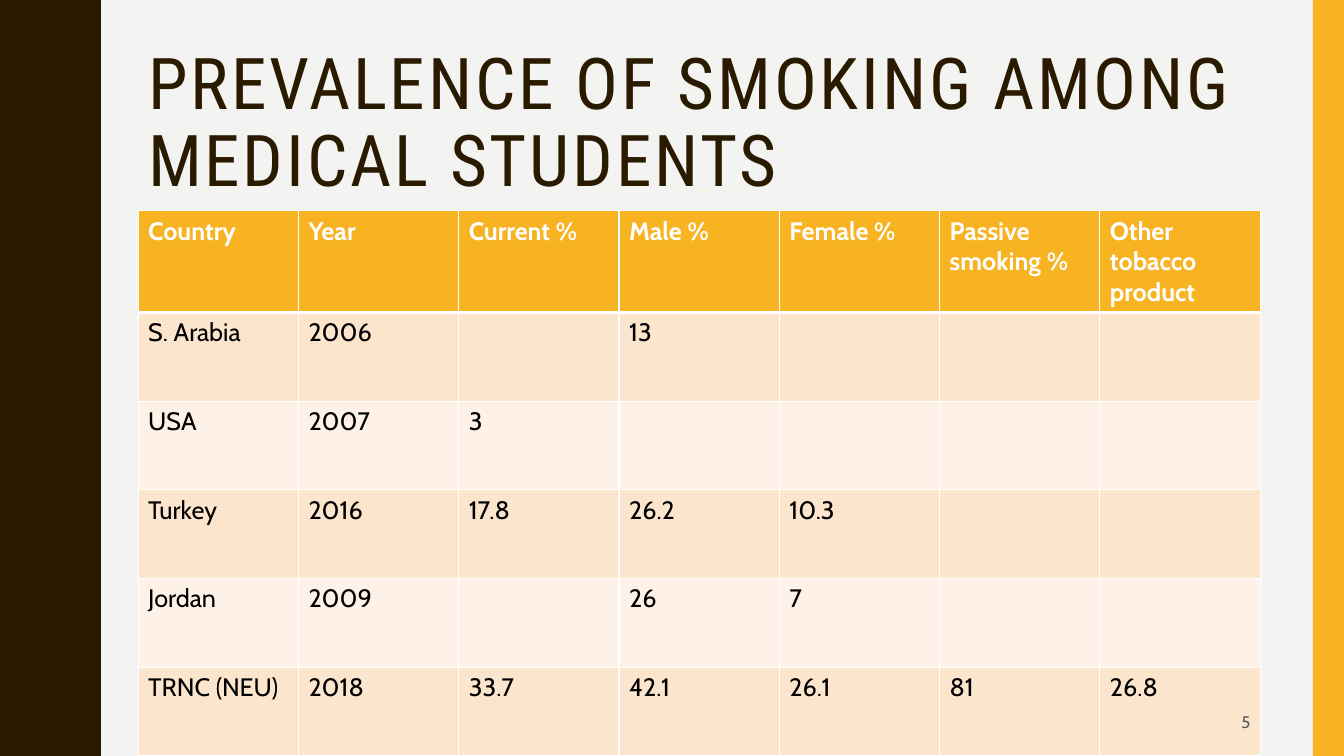
from lxml import etree
from pptx import Presentation
from pptx.dml.color import RGBColor
from pptx.enum.shapes import MSO_SHAPE
from pptx.enum.text import MSO_ANCHOR, PP_ALIGN
from pptx.oxml.ns import qn
from pptx.util import Inches, Pt

RECTANGLE = MSO_SHAPE.RECTANGLE
MIDDLE = MSO_ANCHOR.MIDDLE
LEFT, RIGHT = PP_ALIGN.LEFT, PP_ALIGN.RIGHT

WIDTH, HEIGHT = 13.33, 7.5
MARGIN, CONTENT_WIDTH = 1.37, 11.13
HEADING_FONT, BODY_FONT = "Roboto Condensed", "Cabin"
BROWN, AMBER, WHITE = "2A1A00", "F8B323", "FFFFFF"
BACKGROUND, BLACK, GREY = "F3F3F2", "000000", "595959"
BANDS = ["FCE5CD", "FEF2E8"]

WAVES = 5
WAVE_LENGTH = HEIGHT / WAVES
TROUGH, CREST = 0.78, 0.97
QUARTER_WAVE = [(TROUGH, 0), (0.78, 0.07), (0.79, 0.14), (0.8, 0.2),
                (0.81, 0.25), (0.83, 0.29), (0.85, 0.33), (0.87, 0.38)]

PREVALENCE = [
    ["Country", "Year", "Current %", "Male %", "Female %",
     "Passive smoking %", "Other tobacco\nproduct"],
    ["S. Arabia", "2006", "", "13", "", "", ""],
    ["USA", "2007", "3", "", "", "", ""],
    ["Turkey", "2016", "17.8", "26.2", "10.3", "", ""],
    ["Jordan", "2009", "", "26", "7", "", ""],
    ["TRNC (NEU)", "2018", "33.7", "42.1", "26.1", "81", "26.8"],
]
HEADER_HEIGHT, ROW_HEIGHT = 1.01, 0.88


def paint(fill, color):
    fill.solid()
    fill.fore_color.rgb = RGBColor.from_string(color)


def style_font(font, name, size, color, bold=False):
    font.name, font.size, font.bold = name, Pt(size), bold
    font.color.rgb = RGBColor.from_string(color)


def finish_shape(shape, color):
    shape.shadow.inherit = False
    paint(shape.fill, color)
    shape.line.fill.background()


def add_wavy_edge(slide):
    rise = QUARTER_WAVE + [(TROUGH + CREST - x, WAVE_LENGTH / 2 - y)
                           for x, y in reversed(QUARTER_WAVE[:-1])]
    wave = rise + [(x, WAVE_LENGTH - y) for x, y in reversed(rise[:-1])]
    edge = [(x, y + number * WAVE_LENGTH)
            for number in range(WAVES) for x, y in wave]
    builder = slide.shapes.build_freeform(0, 0, scale=Inches(1))
    builder.add_line_segments(edge + [(0, HEIGHT)], close=True)
    finish_shape(builder.convert_to_shape(), BROWN)


def add_side_bar(slide, width):
    bar = slide.shapes.add_shape(RECTANGLE, Inches(WIDTH - width), 0,
                                 Inches(width), Inches(HEIGHT))
    finish_shape(bar, AMBER)


def add_text(slide, words, box, font, size, color, align=LEFT):
    frame = slide.shapes.add_textbox(*map(Inches, box)).text_frame
    frame.word_wrap = True
    frame.vertical_anchor = MIDDLE
    paragraph = frame.paragraphs[0]
    paragraph.text = words
    paragraph.alignment = align
    style_font(paragraph.font, font, size, color)
    return paragraph


def add_title(slide, words):
    title = add_text(slide, words, (MARGIN, 0.42, CONTENT_WIDTH, 1.63),
                     HEADING_FONT, 51, BROWN)
    title.line_spacing = 0.9
    title.runs[0].font._element.set("spc", "200")


def set_borders(cell, widths):
    properties = cell._tc.get_or_add_tcPr()
    for position, (side, width) in enumerate(widths.items()):
        border = etree.Element(qn(f"a:ln{side}"), w=str(Pt(width)))
        fill = etree.SubElement(border, qn("a:solidFill"))
        etree.SubElement(fill, qn("a:srgbClr"), val=WHITE)
        properties.insert(position, border)


def fill_cell(cell, words, row):
    header = row == 0
    cell.text = words
    for paragraph in cell.text_frame.paragraphs:
        style_font(paragraph.font, BODY_FONT, 18,
                   WHITE if header else BLACK, header)
    paint(cell.fill, AMBER if header else BANDS[(row - 1) % 2])
    set_borders(cell, {"L": 1, "R": 1, "T": 3 if row == 1 else 1,
                       "B": 3 if header else 1})


def add_prevalence_table(slide, top):
    rows, columns = len(PREVALENCE), len(PREVALENCE[0])
    height = HEADER_HEIGHT + (rows - 1) * ROW_HEIGHT
    table = slide.shapes.add_table(
        rows, columns, Inches(MARGIN), Inches(top),
        Inches(CONTENT_WIDTH), Inches(height)).table
    for row, values in enumerate(PREVALENCE):
        table.rows[row].height = Inches(ROW_HEIGHT if row else HEADER_HEIGHT)
        for column, value in enumerate(values):
            fill_cell(table.cell(row, column), value, row)


def main():
    deck = Presentation()
    deck.slide_width, deck.slide_height = Inches(WIDTH), Inches(HEIGHT)
    slide = deck.slides.add_slide(deck.slide_layouts[6])
    paint(slide.background.fill, BACKGROUND)
    add_wavy_edge(slide)
    add_side_bar(slide, 0.31)
    add_title(slide, "PREVALENCE OF SMOKING AMONG MEDICAL STUDENTS")
    add_prevalence_table(slide, 2.09)
    add_text(slide, "5", (9.42, 6.97, 3.08, 0.38), BODY_FONT, 12, GREY, RIGHT)
    deck.save("out.pptx")


if __name__ == "__main__":
    main()
